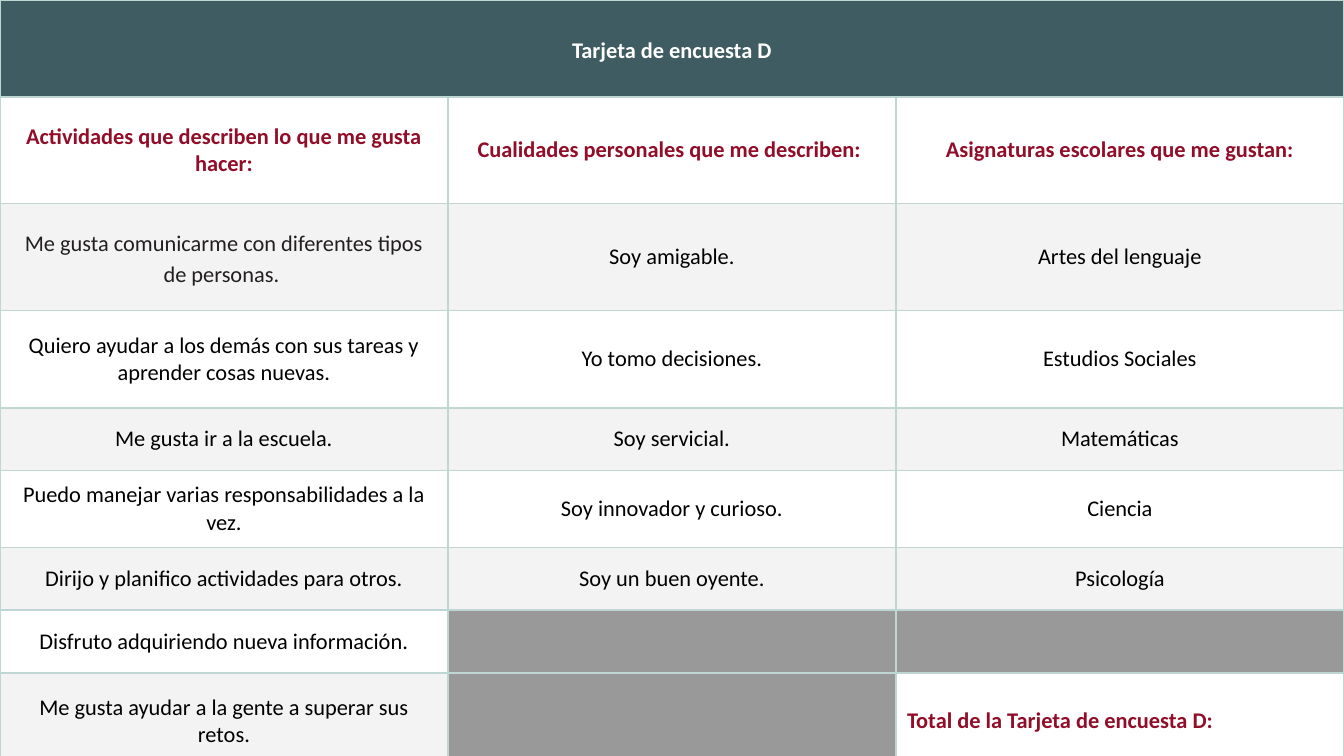
from lxml.etree import SubElement
from pptx import Presentation
from pptx.dml.color import RGBColor
from pptx.enum.text import MSO_ANCHOR, PP_ALIGN
from pptx.oxml.ns import qn
from pptx.util import Pt

WHITE, GREY, DARK_GREY, BLACK = "FFFFFF", "F3F3F3", "999999", "000000"
TEAL, MINT, CRIMSON, INK = "3E5C61", "BED7D3", "910D28", "231F20"

TITLE = "Tarjeta de encuesta D"
HEADINGS = [
    "Actividades que describen lo que me gusta hacer:",
    "Cualidades personales que me describen: ",
    "Asignaturas escolares que me gustan:",
]
ANSWERS = [
    ["Me gusta comunicarme con diferentes tipos de personas. ",
     "Soy amigable.", "Artes del lenguaje"],
    ["Quiero ayudar a los demás con sus tareas y aprender cosas nuevas.",
     "Yo tomo decisiones.", "Estudios Sociales"],
    ["Me gusta ir a la escuela.", "Soy servicial.", "Matemáticas"],
    ["Puedo manejar varias responsabilidades a la vez.",
     "Soy innovador y curioso.", "Ciencia"],
    ["Dirijo y planifico actividades para otros.",
     "Soy un buen oyente.", "Psicología"],
    ["Disfruto adquiriendo nueva información.", None, None],
    ["Me gusta ayudar a la gente a superar sus retos.", None, None],
]
TOTAL = "Total de la Tarjeta de encuesta D:"
ROW_HEIGHTS = [52, 57, 57.5, 52, 33.6, 33.6, 33.6, 33.6, 52]


def color(value):
    return RGBColor.from_string(value)


def add_borders(cell):
    properties = cell._tc.get_or_add_tcPr()
    for side in ("a:lnL", "a:lnR", "a:lnT", "a:lnB"):
        line = SubElement(properties, qn(side), w=str(Pt(1)))
        fill = SubElement(line, qn("a:solidFill"))
        SubElement(fill, qn("a:srgbClr"), val=MINT)


def write_cell(cell, text, fill, ink=BLACK, bold=False,
               align=PP_ALIGN.CENTER, before=0):
    cell.fill.solid()
    cell.fill.fore_color.rgb = color(fill)
    cell.vertical_anchor = MSO_ANCHOR.MIDDLE
    cell.margin_left = cell.margin_right = Pt(6)
    cell.margin_top = cell.margin_bottom = Pt(6)
    cell.text = text or ""
    para = cell.text_frame.paragraphs[0]
    para.alignment = align
    para.space_before = Pt(before)
    para.font.name = "Calibri"
    para.font.size = Pt(12)
    para.font.bold = bold
    para.font.color.rgb = color(ink)
    return para


def add_survey_card(page, left, top, width):
    columns = len(HEADINGS)
    frame = page.shapes.add_table(len(ROW_HEIGHTS), columns, Pt(left), Pt(top),
                                  Pt(width), Pt(sum(ROW_HEIGHTS)))
    table = frame.table
    for column in table.columns:
        column.width = Pt(width / columns)
    for row, height in zip(table.rows, ROW_HEIGHTS):
        row.height = Pt(height)
    for cell in table.iter_cells():
        add_borders(cell)

    # Title band
    banner = table.cell(0, 0)
    banner.merge(table.cell(0, columns - 1))
    para = write_cell(banner, TITLE, TEAL, WHITE, bold=True)
    para.line_spacing = 1.15
    para.space_after = Pt(6)

    # Column headings
    for index, heading in enumerate(HEADINGS):
        write_cell(table.cell(1, index), heading, WHITE, CRIMSON,
                   bold=True, before=10)

    # Answers on alternating bands, unused cells in dark grey
    for number, answers in enumerate(ANSWERS):
        band = WHITE if number % 2 else GREY
        for index, answer in enumerate(answers):
            write_cell(table.cell(number + 2, index), answer,
                       band if answer else DARK_GREY)

    # The first answer is set looser and in a softer black
    para = table.cell(2, 0).text_frame.paragraphs[0]
    para.line_spacing = 1.15
    para.font.color.rgb = color(INK)

    # Total
    write_cell(table.cell(len(ROW_HEIGHTS) - 1, columns - 1), TOTAL, WHITE,
               CRIMSON, bold=True, align=PP_ALIGN.LEFT, before=10)


def main():
    deck = Presentation()
    deck.slide_width, deck.slide_height = Pt(720), Pt(405)
    page = deck.slides.add_slide(deck.slide_layouts[6])
    add_survey_card(page, 0, 0, 720)
    deck.save("out.pptx")


if __name__ == "__main__":
    main()
